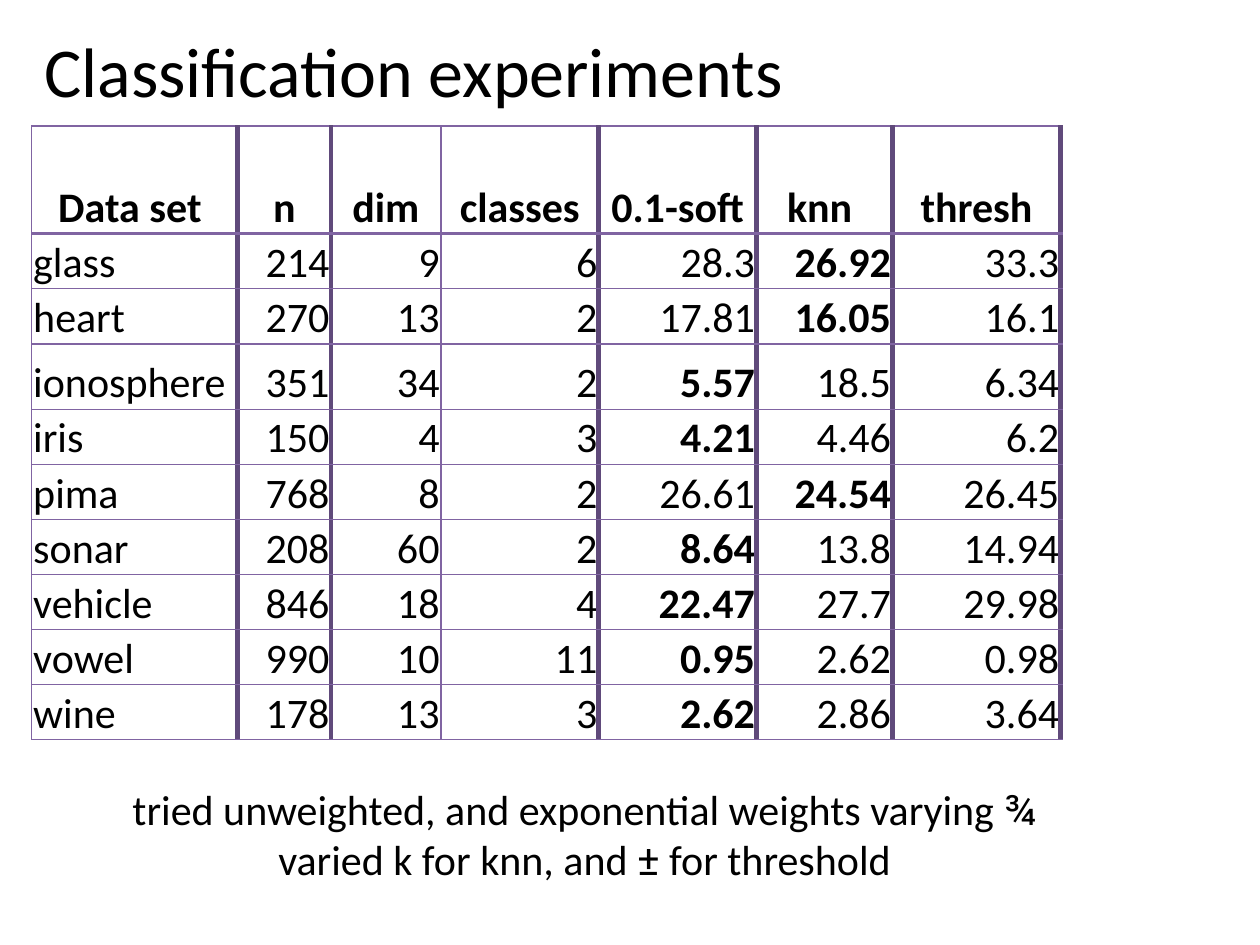
from lxml.etree import SubElement
from pptx import Presentation
from pptx.dml.color import RGBColor
from pptx.enum.text import MSO_ANCHOR as Anchor, MSO_AUTO_SIZE as AutoSize, PP_ALIGN as Align
from pptx.oxml.ns import qn
from pptx.util import Cm, Pt

BLACK, LILAC, PURPLE = "000000", "8064A2", "604A7B"
HEADERS = ["Data set ", " n ", " dim ", "classes", " 0.1-soft ", "knn ", " thresh "]
RESULTS = [
    ("glass", "214", "9", "6", "28.3", "26.92", "33.3"),
    ("heart", "270", "13", "2", "17.81", "16.05", "16.1"),
    ("ionosphere", "351", "34", "2", "5.57", "18.5", "6.34"),
    ("iris", "150", "4", "3", "4.21", "4.46", "6.2"),
    ("pima", "768", "8", "2", "26.61", "24.54", "26.45"),
    ("sonar", "208", "60", "2", "8.64", "13.8", "14.94"),
    ("vehicle", "846", "18", "4", "22.47", "27.7", "29.98"),
    ("vowel", "990", "10", "11", "0.95", "2.62", "0.98"),
    ("wine", "178", "13", "3", "2.62", "2.86", "3.64"),
]
COLUMN_WIDTHS = [4.15, 1.88, 2.22, 3.18, 3.18, 2.74, 3.39]
ROW_HEIGHTS = [2.17, 1.11, 1.11, 1.32] + [1.11] * 6
FIRST_ERROR_COLUMN = 4
THICK_EDGES = {1, 2, 4, 5, 6, 7}
NOTES = [
    [("tried unweighted, and exponential weights varying ", "Calibri"), ("¾", "Roboto")],
    [("varied k for knn, and ", "Calibri"), ("±", "Roboto"), (" for threshold", "Calibri")],
]


def color(value):
    """Return the colour of a hex string."""
    return RGBColor.from_string(value)


def add_run(paragraph, text, size, font="Calibri", bold=False):
    """Append one formatted run to a paragraph."""
    run = paragraph.add_run()
    run.text = text
    run.font.size, run.font.name, run.font.bold = Pt(size), font, bold
    run.font.color.rgb = color(BLACK)


def place(shape, left, top, width, height):
    """Move a shape to a box given in centimetres."""
    shape.left, shape.top, shape.width, shape.height = map(Cm, (left, top, width, height))


def add_title(slide, *box):
    """Fill and place the title placeholder."""
    title = slide.shapes.title
    place(title, *box)
    frame = title.text_frame
    frame.word_wrap, frame.auto_size = False, AutoSize.SHAPE_TO_FIT_TEXT
    frame.vertical_anchor = Anchor.TOP
    frame.paragraphs[0].alignment = Align.LEFT
    add_run(frame.paragraphs[0], "Classification experiments", 40)


def set_borders(cell, row, column):
    """Draw the four borders of a table cell."""
    edge_style = {True: (PURPLE, 3), False: (LILAC, 1)}
    header_line = (LILAC, 2)
    borders = {
        "a:lnL": edge_style[column in THICK_EDGES],
        "a:lnR": edge_style[column + 1 in THICK_EDGES],
        "a:lnT": header_line if row == 1 else (LILAC, 1),
        "a:lnB": header_line if row == 0 else (LILAC, 1),
    }
    properties = cell._tc.get_or_add_tcPr()
    for position, (tag, (value, width)) in enumerate(borders.items()):
        line = SubElement(properties, qn(tag), w=str(Pt(width)))
        fill = SubElement(line, qn("a:solidFill"))
        SubElement(fill, qn("a:srgbClr"), val=value)
        properties.insert(position, line)


def fill_cell(cell, text, alignment, bold):
    """Write and format the content of one table cell."""
    cell.fill.background()
    cell.vertical_anchor = Anchor.BOTTOM
    cell.margin_left = cell.margin_right = cell.margin_top = Cm(0.03)
    cell.margin_bottom = 0
    paragraph = cell.text_frame.paragraphs[0]
    paragraph.alignment = alignment
    add_run(paragraph, text, 24, bold=bold)


def add_results_table(slide, left, top):
    """Add the error table with the lowest error of each data set in bold."""
    rows = [HEADERS, *RESULTS]
    size = (sum(COLUMN_WIDTHS), sum(ROW_HEIGHTS))
    table = slide.shapes.add_table(
        len(rows), len(HEADERS), *map(Cm, (left, top, *size))).table
    table.first_row = table.horz_banding = False
    for column, width in zip(table.columns, COLUMN_WIDTHS):
        column.width = Cm(width)
    for row, height in zip(table.rows, ROW_HEIGHTS):
        row.height = Cm(height)
    for row, values in enumerate(rows):
        best = min(values[FIRST_ERROR_COLUMN:], key=float) if row else None
        for column, text in enumerate(values):
            is_best = column >= FIRST_ERROR_COLUMN and text == best
            body_alignment = Align.RIGHT if column else Align.LEFT
            cell = table.cell(row, column)
            fill_cell(cell, text, body_alignment if row else Align.CENTER, row == 0 or is_best)
            set_borders(cell, row, column)


def add_notes(slide, *box):
    """Add the centred remarks below the table."""
    frame = slide.shapes.add_textbox(*map(Cm, box)).text_frame
    frame.word_wrap, frame.auto_size = False, AutoSize.SHAPE_TO_FIT_TEXT
    for index, runs in enumerate(NOTES):
        paragraph = frame.add_paragraph() if index else frame.paragraphs[0]
        paragraph.alignment = Align.CENTER
        for text, font in runs:
            add_run(paragraph, text, 24, font)


def main():
    """Build and save the presentation."""
    presentation = Presentation()
    presentation.slide_width, presentation.slide_height = Cm(25.4), Cm(19.05)
    slide = presentation.slides.add_slide(presentation.slide_layouts[5])
    add_title(slide, 0.64, 0.43, 15.57, 1.96)
    add_results_table(slide, 0.64, 2.54)
    add_notes(slide, 2.11, 15.67, 19.35, 2.31)
    presentation.save("out.pptx")


if __name__ == "__main__":
    main()
